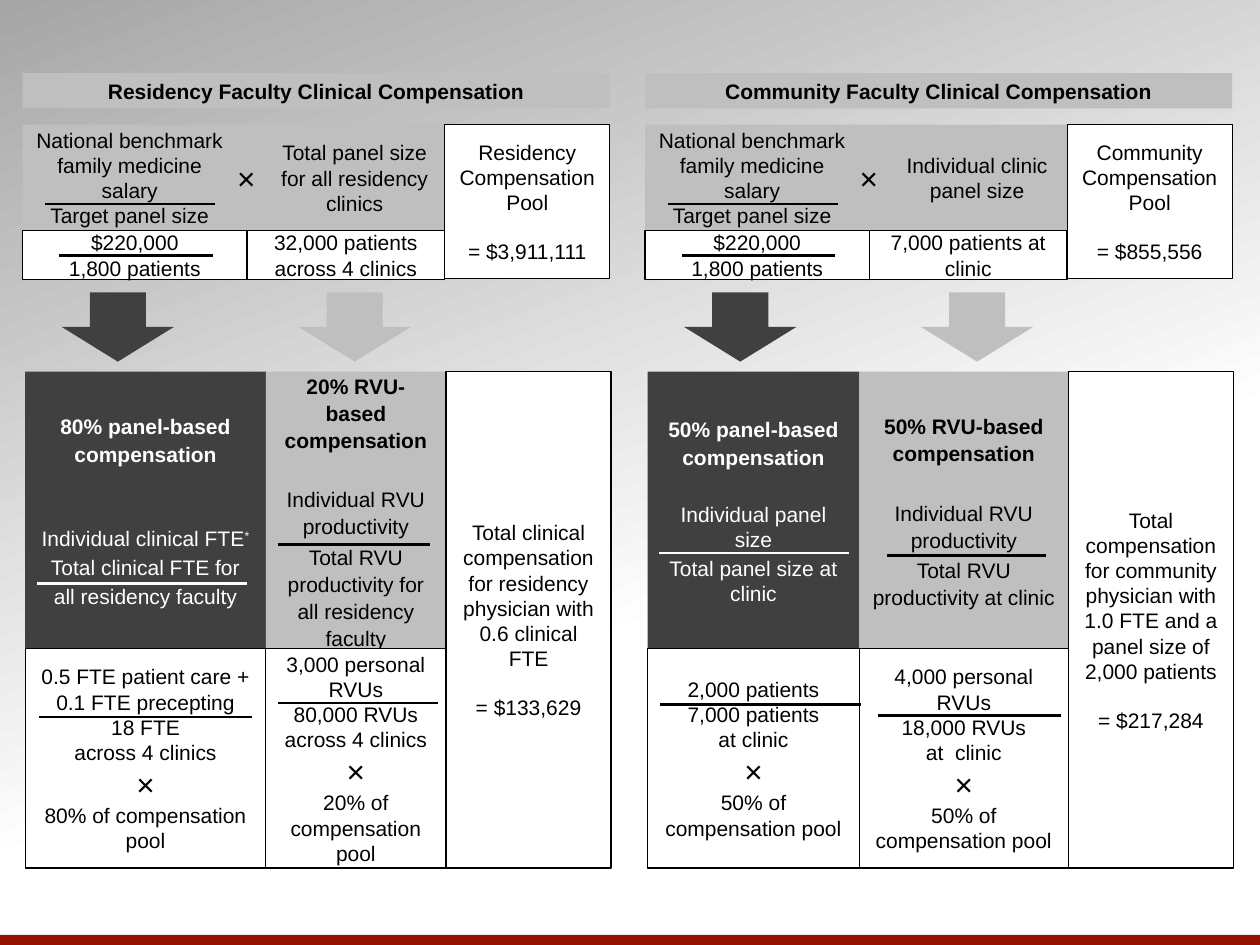
"""Build the slide comparing residency and community faculty clinical compensation."""
from copy import deepcopy

from lxml import etree
from pptx import Presentation
from pptx.dml.color import RGBColor
from pptx.enum.shapes import MSO_CONNECTOR, MSO_SHAPE
from pptx.enum.text import MSO_ANCHOR, PP_ALIGN
from pptx.oxml.ns import qn
from pptx.util import Inches, Pt

RECTANGLE, DOWN_ARROW = MSO_SHAPE.RECTANGLE, MSO_SHAPE.DOWN_ARROW
STRAIGHT, CENTER, MIDDLE = MSO_CONNECTOR.STRAIGHT, PP_ALIGN.CENTER, MSO_ANCHOR.MIDDLE

THEME = {
    "font": "Arial", "size": 12, "sign_size": 18, "border": 0.75, "rule": 1.5,
    "dark": "404040", "gray": "BFBFBF", "white": "FFFFFF", "black": "000000",
    "red": "951100", "shade": "A6A6A6",
}

BOLD = {"bold": True}
TIMES = ("×", {"size": THEME["sign_size"]})
BENCHMARK = ["National benchmark", "family medicine salary", "Target panel size"]
RATE = ["$220,000", "1,800 patients"]

SIDES = [
    {
        "left": 0.18,
        "heading": "Residency Faculty Clinical Compensation",
        "size_label": "Total panel size for all residency clinics",
        "size_value": "32,000 patients across 4 clinics",
        "pool": ["Residency Compensation Pool", ("= $3,911,111", {"gap": 1})],
        "widths": (1.91, 1.43, 1.31),
        "panel": [("80% panel-based", BOLD), ("compensation", BOLD),
                  ("Individual clinical FTE", {"gap": 2, "note": "*"}),
                  "Total clinical FTE for", "all residency faculty"],
        "rvu": [("20% RVU-based compensation", BOLD),
                ("Individual RVU productivity", {"gap": 1}),
                "Total RVU productivity for all residency faculty"],
        "panel_example": ["0.5 FTE patient care +", "0.1 FTE precepting", "18 FTE",
                          "across 4 clinics", TIMES, "80% of compensation pool"],
        "rvu_example": ["3,000 personal RVUs", "80,000 RVUs across 4 clinics",
                        TIMES, "20% of compensation pool"],
        "total": ["Total clinical compensation for residency physician with 0.6 clinical FTE",
                  ("= $133,629", {"gap": 1})],
        "bars": [(0.11, 1.78, 4.63, "white"), (2.03, 3.23, 4.32, "black"),
                 (0.13, 1.82, 5.69, "black"), (2.03, 3.3, 5.58, "black")],
    },
    {
        "left": 5.12,
        "heading": "Community Faculty Clinical Compensation",
        "size_label": "Individual clinic panel size",
        "size_value": "7,000 patients at clinic",
        "pool": ["Community Compensation Pool", ("= $855,556", {"gap": 1})],
        "widths": (1.68, 1.66, 1.31),
        "panel": [("50% panel-based", BOLD), ("compensation", BOLD),
                  ("Individual panel size", {"gap": 1}), "Total panel size at clinic"],
        "rvu": [("50% RVU-based compensation", BOLD),
                ("Individual RVU productivity", {"gap": 1}),
                "Total RVU productivity at clinic"],
        "panel_example": ["2,000 patients", "7,000 patients", "at clinic",
                          TIMES, "50% of compensation pool"],
        "rvu_example": ["4,000 personal RVUs", "18,000 RVUs", "at  clinic",
                        TIMES, "50% of compensation pool"],
        "total": ["Total compensation for community physician with 1.0 FTE "
                  "and a panel size of 2,000 patients",
                  ("= $217,284", {"gap": 1})],
        "bars": [(0.11, 1.62, 4.39, "white"), (1.92, 3.18, 4.41, "black"),
                 (0.12, 1.71, 5.59, "black"), (1.85, 3.3, 5.68, "black")],
    },
]

SHARED_BARS = [(0.18, 1.53, 1.62, "black"), (0.29, 1.51, 2.03, "black")]
ARROWS = [(0.31, "dark"), (2.19, "gray")]


def color(name):
    return RGBColor.from_string(THEME[name])


def add_shape(page, kind, left, top, width, height, fill, border=False):
    shape = page.shapes.add_shape(
        kind, Inches(left), Inches(top), Inches(width), Inches(height))
    shape.shadow.inherit = False
    shape.fill.solid()
    shape.fill.fore_color.rgb = color(fill)
    if border:
        shape.line.color.rgb = color("black")
        shape.line.width = Pt(THEME["border"])
    else:
        shape.line.fill.background()
    return shape


def add_span(para, text, ink, size=THEME["size"], bold=False, raised=False):
    span = para.add_run()
    span.text = text
    span.font.name = THEME["font"]
    span.font.size = Pt(size)
    span.font.bold = bold
    span.font.color.rgb = color(ink)
    if raised:
        span.font._element.set("baseline", "30000")


def write(box, items, ink="black", spacing=None, after=0, wrap=True):
    frame = box.text_frame
    frame.word_wrap = wrap
    frame.vertical_anchor = MIDDLE
    blank_line = 1.15 * THEME["size"] * (spacing or 1) + after
    for index, item in enumerate(items):
        text, style = (item, {}) if isinstance(item, str) else item
        para = frame.add_paragraph() if index else frame.paragraphs[0]
        para.alignment = CENTER
        para.space_after = Pt(after)
        if spacing:
            para.line_spacing = spacing
        if "gap" in style:
            para.space_before = Pt(round(style["gap"] * blank_line, 1))
        add_span(para, text, ink, style.get("size", THEME["size"]), style.get("bold", False))
        if "note" in style:
            add_span(para, style["note"], ink, raised=True)


def add_box(page, area, items, fill="white", **text_format):
    box = add_shape(page, RECTANGLE, *area, fill, border=fill == "white")
    write(box, items, **text_format)


def add_bar(page, start, end, top, ink):
    bar = page.shapes.add_connector(
        STRAIGHT, Inches(start), Inches(top), Inches(end), Inches(top))
    bar.line.color.rgb = color(ink)
    bar.line.width = Pt(THEME["rule"])
    etree.SubElement(bar._element.spPr, qn("a:effectLst"))


def add_side(page, side):
    left = side["left"]
    add_box(page, (left, 0.58, 4.66, 0.28), [(side["heading"], BOLD)], "gray", spacing=1.07)
    add_box(page, (left, 0.99, 1.7, 0.84), BENCHMARK, "gray")
    add_box(page, (left + 1.91, 0.99, 1.45, 0.84), [side["size_label"]], "gray")
    add_box(page, (left + 1.62, 0.99, 0.31, 0.84), [TIMES], "gray", wrap=False)
    add_box(page, (left, 1.83, 1.78, 0.39), RATE)
    add_box(page, (left + 1.78, 1.83, 1.57, 0.39), [side["size_value"]])
    add_box(page, (left + 3.35, 0.99, 1.31, 1.22), side["pool"])

    for offset, fill in ARROWS:
        add_shape(page, DOWN_ARROW, left + offset, 2.32, 0.89, 0.55, fill)

    panel_width, rvu_width, total_width = side["widths"]
    panel_left = left + 0.02
    rvu_left = panel_left + panel_width
    total_left = rvu_left + rvu_width
    add_box(page, (panel_left, 2.95, panel_width, 2.21), side["panel"], "dark",
            ink="white", after=2)
    add_box(page, (rvu_left, 2.95, rvu_width, 2.21), side["rvu"], "gray",
            spacing=1.07, after=2)
    add_box(page, (panel_left, 5.15, panel_width, 1.74), side["panel_example"])
    add_box(page, (rvu_left, 5.15, rvu_width, 1.74), side["rvu_example"])
    add_box(page, (total_left, 2.95, total_width, 3.94), side["total"])

    for start, end, top, ink in SHARED_BARS + side["bars"]:
        add_bar(page, left + start, left + end, top, ink)


def paint_background(page):
    fill = page.background.fill
    fill.gradient()
    fill.gradient_angle = 290
    for stop, position, name in zip(fill.gradient_stops, (0, 0.62), ("shade", "white")):
        stop.position = position
        stop.color.rgb = color(name)
    stops = page.element.xpath(".//p:bg//a:gsLst")[0]
    last = deepcopy(stops[-1])
    last.set("pos", "100000")
    stops.append(last)


def main():
    deck = Presentation()
    deck.slide_width, deck.slide_height = Inches(10), Inches(7.5)
    page = deck.slides.add_slide(deck.slide_layouts[6])
    paint_background(page)
    add_shape(page, RECTANGLE, 0, 7.42, 10, 0.08, "red")
    for side in SIDES:
        add_side(page, side)
    deck.save("out.pptx")


if __name__ == "__main__":
    main()
